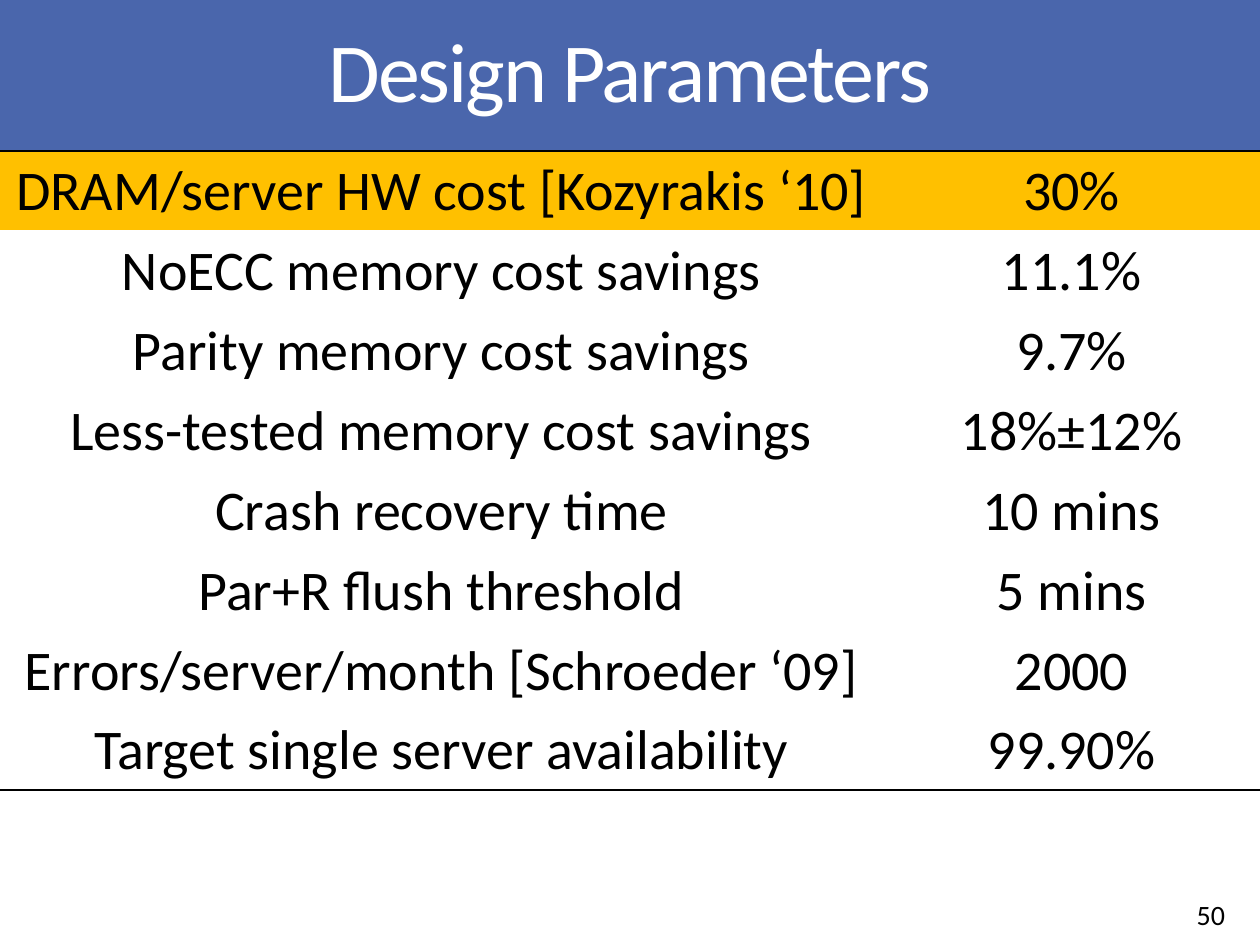
from typing import NamedTuple

from lxml.etree import SubElement
from pptx import Presentation
from pptx.dml.color import RGBColor
from pptx.enum.text import MSO_ANCHOR, MSO_AUTO_SIZE, PP_ALIGN
from pptx.oxml import parse_xml
from pptx.oxml.ns import nsdecls, qn
from pptx.util import Inches, Pt

WIDTH, HEIGHT = 10, 7.5
TITLE_H = 1.19
ROW_H = 0.634
COLS = (0.701, 0.299)
NO_STYLE = "{2D5ABB26-0587-4C30-8999-92F81FD0307C}"
BLUE, GOLD, BLACK, WHITE = "4A66AC", "FFC000", "000000", "FFFFFF"


class Parameter(NamedTuple):
    name: str
    value: str


PARAMETERS = [
    Parameter("DRAM/server HW cost [Kozyrakis ‘10]", "30%"),
    Parameter("NoECC memory cost savings", "11.1%"),
    Parameter("Parity memory cost savings", "9.7%"),
    Parameter("Less-tested memory cost savings", "18%±12%"),
    Parameter("Crash recovery time", "10 mins"),
    Parameter("Par+R flush threshold", "5 mins"),
    Parameter("Errors/server/month [Schroeder ‘09]", "2000"),
    Parameter("Target single server availability", "99.90%"),
]


def set_color(fmt, color: str) -> None:
    if hasattr(fmt, "solid"):
        fmt.solid()
        fmt = fmt.fore_color
    fmt.rgb = RGBColor.from_string(color)


def set_attrs(obj, values: dict) -> None:
    for name, value in values.items():
        setattr(obj, name, value)


def place(sp, left: float, top: float, width: float, height: float) -> None:
    box = dict(left=left, top=top, width=width, height=height)
    set_attrs(sp, {name: Inches(v) for name, v in box.items()})


def write(tf, text: str, size: int, color: str, align: PP_ALIGN):
    p = tf.paragraphs[0]
    p.alignment = align
    r = p.add_run()
    r.text = text
    set_attrs(r.font, {"name": "Calibri", "size": Pt(size)})
    set_color(r.font.color, color)
    return p, r


def add_border(cell, side: str) -> None:
    ln = parse_xml(f'<a:{side} {nsdecls("a")} w="{Pt(1)}"/>')
    fill = SubElement(ln, qn("a:solidFill"))
    SubElement(fill, qn("a:srgbClr")).set("val", BLACK)
    cell._tc.get_or_add_tcPr().insert(0, ln)


def add_grid(s, top: float, rows: int):
    sp = s.shapes.add_table(rows, len(COLS), 0, Inches(top),
                            Inches(WIDTH), Inches(rows * ROW_H))
    table = sp.table
    set_attrs(table, {"first_row": False, "horz_banding": False})
    table._tbl.tblPr.find(qn("a:tableStyleId")).text = NO_STYLE
    for col, share in zip(table.columns, COLS):
        col.width = Inches(WIDTH * share)
    return table


def add_highlight(s) -> None:
    for cell in add_grid(s, TITLE_H, 1).iter_cells():
        set_color(cell.fill, GOLD)


def add_parameters(s, parameters: list[Parameter]) -> None:
    table = add_grid(s, TITLE_H + 0.01, len(parameters))
    borders = {0: "lnT", len(parameters) - 1: "lnB"}
    for i, parameter in enumerate(parameters):
        for j, text in enumerate(parameter):
            cell = table.cell(i, j)
            cell.fill.background()
            write(cell.text_frame, text, 32, BLACK, PP_ALIGN.CENTER)
            if i in borders:
                add_border(cell, borders[i])


def add_title(s, text: str) -> None:
    sp = s.shapes.title
    place(sp, 0, 0, WIDTH, TITLE_H)
    set_color(sp.fill, BLUE)
    tf = sp.text_frame
    set_attrs(tf, {"vertical_anchor": MSO_ANCHOR.MIDDLE,
                   "auto_size": MSO_AUTO_SIZE.NONE, "word_wrap": True})
    p, r = write(tf, text, 48, WHITE, PP_ALIGN.CENTER)
    p.line_spacing = 0.9
    r.font._element.set("spc", "-120")


def add_page_number(s, text: str) -> None:
    sp = s.shapes.add_textbox(0, 0, 0, 0)
    place(sp, 7.57, 7.06, 2.25, 0.4)
    tf = sp.text_frame
    set_attrs(tf, {"vertical_anchor": MSO_ANCHOR.MIDDLE, "word_wrap": True})
    write(tf, text, 16, BLACK, PP_ALIGN.RIGHT)


def main() -> None:
    prs = Presentation()
    set_attrs(prs, {"slide_width": Inches(WIDTH),
                    "slide_height": Inches(HEIGHT)})
    s = prs.slides.add_slide(prs.slide_layouts.get_by_name("Title Only"))
    add_highlight(s)
    add_title(s, "Design Parameters")
    add_page_number(s, "50")
    add_parameters(s, PARAMETERS)
    prs.save("out.pptx")


if __name__ == "__main__":
    main()
